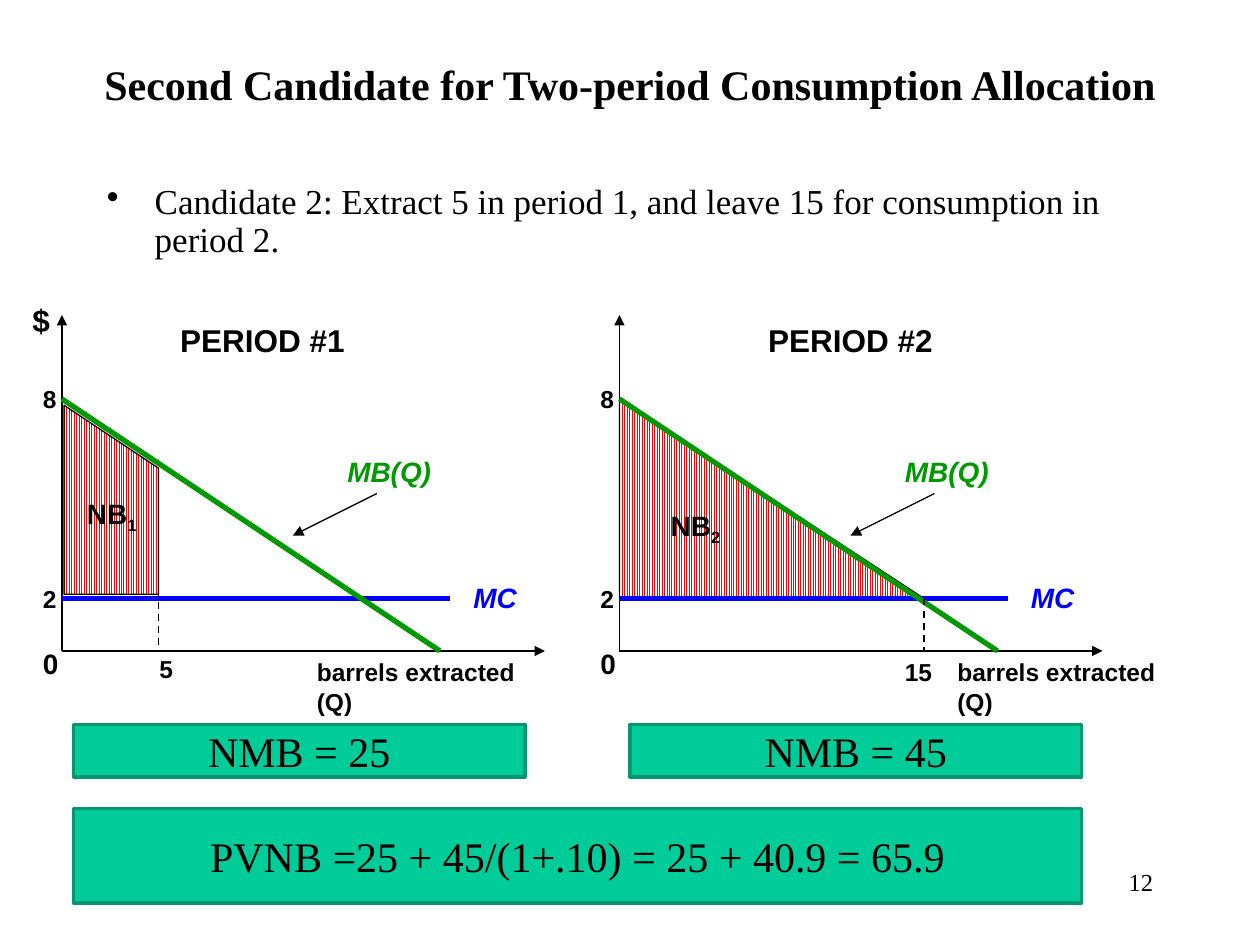
from dataclasses import dataclass

from lxml import etree
from pptx import Presentation, util as u
from pptx.dml.color import RGBColor
from pptx.enum import dml, shapes, text
from pptx.oxml.ns import qn

# The slide is a grid of 120 columns by 90 rows, twelve to the inch
CELL = u.Inches(1) / 12
BLACK, GREEN, BLUE = "000000", "009900", "0000FF"
SERIF, SANS = "Times New Roman", "Arial"
LEFT, CENTER, RIGHT = text.PP_ALIGN.LEFT, text.PP_ALIGN.CENTER, text.PP_ALIGN.RIGHT
Point = tuple[float, float]

# Rows of the diagrams: axis top, choke price, marginal cost, quantity axis
TOP, CHOKE, COST, BASE = 30, 38, 57, 62


@dataclass
class Label:
    words: str
    column: float
    row: float
    width: float
    height: float = 4
    size: float = 14
    font: str = SANS
    color: str = BLACK
    bold: bool = True
    italic: bool = False
    align: text.PP_ALIGN = LEFT
    wrap: bool = False
    subscript: str = ""


@dataclass
class Panel:
    """One period; columns are counted from the price axis."""
    origin: float
    region: list[Point]
    guide: tuple[Point, Point]
    labels: list[Label]


def grid(cells: float) -> u.Emu:
    return u.Emu(round(cells * CELL))


def color(value: str) -> RGBColor:
    return RGBColor.from_string(value)


def apply(target, values: dict) -> None:
    for name, value in values.items():
        setattr(target, name, value)


def write(frame, label: Label):
    paragraph = frame.paragraphs[0]
    paragraph.alignment = label.align
    for words in filter(None, (label.words, label.subscript)):
        run = paragraph.add_run()
        run.text = words
        apply(run.font, {"name": label.font, "size": u.Pt(label.size),
                         "bold": label.bold, "italic": label.italic})
        run.font.color.rgb = color(label.color)
        if words == label.subscript:
            run.font._element.set("baseline", "-25000")
    return paragraph


def add_label(slide, label: Label, origin: float = 0, middle: bool = False):
    box = slide.shapes.add_textbox(grid(origin + label.column), grid(label.row),
                                   grid(label.width), grid(label.height))
    anchor = text.MSO_ANCHOR.MIDDLE if middle else text.MSO_ANCHOR.TOP
    apply(box.text_frame, {"word_wrap": label.wrap, "vertical_anchor": anchor})
    return write(box.text_frame, label)


def add_line(slide, start: Point, end: Point, origin: float = 0, stroke: str = BLACK,
             width: float = 0.75, arrow: bool = False, dashed: bool = False) -> None:
    connector = slide.shapes.add_connector(
        shapes.MSO_CONNECTOR.STRAIGHT, grid(origin + start[0]), grid(start[1]),
        grid(origin + end[0]), grid(end[1]))
    connector.line.color.rgb = color(stroke)
    connector.line.width = u.Pt(width)
    if dashed:
        connector.line.dash_style = dml.MSO_LINE.DASH
    if arrow:
        outline = connector.line._get_or_add_ln()
        etree.SubElement(outline, qn("a:tailEnd"), type="triangle")
    etree.SubElement(connector._element.spPr, qn("a:effectLst"))


def add_region(slide, panel: Panel) -> None:
    """Hatched net benefit area."""
    first, *rest = [(round((panel.origin + x) * CELL), round(y * CELL))
                    for x, y in panel.region]
    builder = slide.shapes.build_freeform(*first)
    builder.add_line_segments(rest, close=True)
    shape = builder.convert_to_shape()
    shape.shadow.inherit = False
    shape.fill.patterned()
    shape.fill.pattern = dml.MSO_PATTERN.LIGHT_VERTICAL
    shape.fill.fore_color.rgb = color("FF0000")
    shape.fill.back_color.rgb = color("FFFFFF")
    shape.line.color.rgb = color(BLACK)
    shape.line.width = u.Pt(0.75)


def add_panel(slide, panel: Panel) -> None:
    origin = panel.origin
    # Axes, benefit area and curves
    add_line(slide, (0, BASE), (0, TOP), origin, arrow=True)
    add_line(slide, (0, BASE), (46, BASE), origin, arrow=True)
    add_region(slide, panel)
    add_line(slide, (0, COST), (37, COST), origin, BLUE, 3)
    add_line(slide, (0, CHOKE), (36, BASE), origin, GREEN, 3)
    add_line(slide, *panel.guide, origin, width=1, dashed=True)
    add_line(slide, (30, 47), (22, 51), origin, arrow=True)
    # Labels shared by both periods, then those of this one
    common = [
        Label("8", -3, 36, 3.7),
        Label("2", -3, 55, 3.7),
        Label("0", -3, 61, 3.9, size=16),
        Label("MC", 38, 54.7, 6.6, size=16, color=BLUE, italic=True),
        Label("MB(Q)", 26, 42.7, 10.4, size=16, color=GREEN, italic=True),
    ]
    for label in common + panel.labels:
        add_label(slide, label, origin)


def add_result(slide, label: Label) -> None:
    shape = slide.shapes.add_shape(
        shapes.MSO_SHAPE.RECTANGLE, grid(label.column), grid(label.row),
        grid(label.width), grid(label.height))
    shape.shadow.inherit = False
    shape.fill.solid()
    shape.fill.fore_color.rgb = color("00CC99")
    shape.line.color.rgb = color("009771")
    shape.line.width = u.Pt(2)
    shape.text_frame.vertical_anchor = text.MSO_ANCHOR.MIDDLE
    write(shape.text_frame, label)


def add_bullet(paragraph) -> None:
    apply(paragraph, {"line_spacing": 0.9, "space_before": u.Pt(4)})
    properties = paragraph._p.get_or_add_pPr()
    indent = u.Inches(0.38)
    properties.set("marL", str(indent))
    properties.set("indent", str(-indent))
    etree.SubElement(properties, qn("a:buChar"), char="•")


PANELS = [
    Panel(5.9, [(0.2, 38.6), (9.2, 44.6), (9.2, 56.6), (0.2, 56.6)],
          ((9.2, 44.6), (9.2, 61.7)), [
        Label("$", -4, 28.1, 4.1, size=18),
        Label("PERIOD #1", 8.1, 30, 22, size=18, align=CENTER, wrap=True),
        Label("NB", 1.2, 46.7, 9, size=16, wrap=True, subscript="1"),
        Label("5", 8.1, 61.7, 3.7),
        Label("barrels extracted (Q)", 23.1, BASE, 25.2, wrap=True)]),
    Panel(59, [(0, CHOKE), (0, COST), (29, COST)],
          ((29, COST), (29, BASE)), [
        Label("PERIOD #2", 12, 30, 20, size=18, align=CENTER, wrap=True),
        Label("NB", 3.7, 47.8, 8.2, size=16, wrap=True, subscript="2"),
        Label("15", 26, BASE, 5),
        Label("barrels extracted (Q)", 31, BASE, 25.2, wrap=True)]),
]

SERIF_STYLE = {"font": SERIF, "bold": False, "wrap": True}
RESULT_STYLE = {**SERIF_STYLE, "size": 24, "align": CENTER}
RESULTS = [
    Label("NMB = 25", 7, 69, 43, 5, **RESULT_STYLE),
    Label("NMB = 45", 60, 69, 43, 5, **RESULT_STYLE),
    Label("PVNB =25 + 45/(1+.10) = 25 + 40.9 = 65.9", 7, 77, 96, 9, **RESULT_STYLE),
]


def main() -> None:
    presentation = Presentation()
    apply(presentation, {"slide_width": grid(120), "slide_height": grid(90)})
    slide = presentation.slides.add_slide(presentation.slide_layouts[6])

    # Title, statement and page number
    add_label(slide, Label("Second Candidate for Two-period Consumption Allocation",
                           5, 3, 110, 10, 24, SERIF, align=CENTER, wrap=True), middle=True)
    add_bullet(add_label(slide, Label(
        "Candidate 2: Extract 5 in period 1, and leave 15 for consumption in period 2.",
        9, 17, 102, 9, 20, **SERIF_STYLE)))
    add_label(slide, Label("12", 86, 82, 25, 6, align=RIGHT, **SERIF_STYLE))

    # Diagrams and results
    for panel in PANELS:
        add_panel(slide, panel)
    for result in RESULTS:
        add_result(slide, result)
    presentation.save("out.pptx")


if __name__ == "__main__":
    main()
